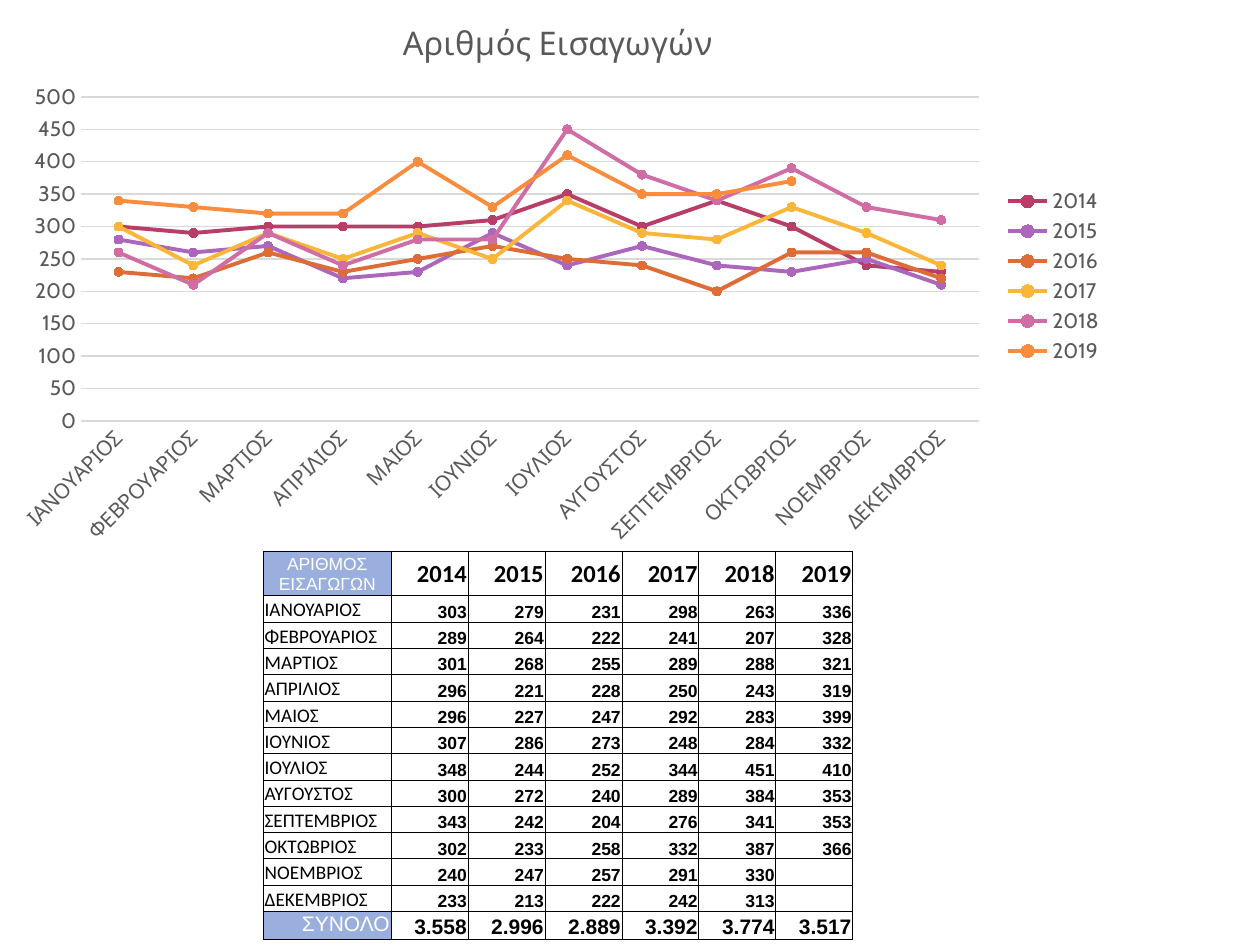
from lxml import etree
from pptx import Presentation
from pptx.chart.data import CategoryChartData
from pptx.dml.color import RGBColor
from pptx.enum.chart import XL_CHART_TYPE, XL_LEGEND_POSITION, XL_MARKER_STYLE, XL_TICK_MARK
from pptx.enum.text import MSO_ANCHOR, PP_ALIGN
from pptx.oxml import parse_xml
from pptx.oxml.ns import nsdecls, qn
from pptx.util import Pt

LINE_MARKERS = XL_CHART_TYPE.LINE_MARKERS
LEGEND_RIGHT = XL_LEGEND_POSITION.RIGHT
CIRCLE = XL_MARKER_STYLE.CIRCLE
NO_TICK = XL_TICK_MARK.NONE
TOP, MIDDLE, BOTTOM = MSO_ANCHOR.TOP, MSO_ANCHOR.MIDDLE, MSO_ANCHOR.BOTTOM
LEFT, CENTER, RIGHT = PP_ALIGN.LEFT, PP_ALIGN.CENTER, PP_ALIGN.RIGHT

BLACK, WHITE, GREY, GRID, BLUE = "000000", "FFFFFF", "595959", "D9D9D9", "9BAFDE"
YEARS = ["2014", "2015", "2016", "2017", "2018", "2019"]
YEAR_COLORS = ["B83D68", "AC66BB", "DE6C36", "F9B639", "CF6DA4", "FA8D3D"]
ADMISSIONS = {
    "ΙΑΝΟΥΑΡΙΟΣ": [303, 279, 231, 298, 263, 336],
    "ΦΕΒΡΟΥΑΡΙΟΣ": [289, 264, 222, 241, 207, 328],
    "ΜΑΡΤΙΟΣ": [301, 268, 255, 289, 288, 321],
    "ΑΠΡΙΛΙΟΣ": [296, 221, 228, 250, 243, 319],
    "ΜΑΙΟΣ": [296, 227, 247, 292, 283, 399],
    "ΙΟΥΝΙΟΣ": [307, 286, 273, 248, 284, 332],
    "ΙΟΥΛΙΟΣ": [348, 244, 252, 344, 451, 410],
    "ΑΥΓΟΥΣΤΟΣ": [300, 272, 240, 289, 384, 353],
    "ΣΕΠΤΕΜΒΡΙΟΣ": [343, 242, 204, 276, 341, 353],
    "ΟΚΤΩΒΡΙΟΣ": [302, 233, 258, 332, 387, 366],
    "ΝΟΕΜΒΡΙΟΣ": [240, 247, 257, 291, 330, None],
    "ΔΕΚΕΜΒΡΙΟΣ": [233, 213, 222, 242, 313, None],
}
BY_YEAR = list(zip(*ADMISSIONS.values()))


def rgb(value):
    return RGBColor.from_string(value)


def style_font(font, name, size, color, bold=False):
    font.name, font.size, font.bold = name, Pt(size), bold
    font.color.rgb = rgb(color)


def add_admissions_chart(page, left, top, width, height):
    data = CategoryChartData(number_format="#,##0")
    data.categories = list(ADMISSIONS)
    for year, values in zip(YEARS, BY_YEAR):
        # The lines are plotted to the nearest ten
        data.add_series(year, [None if v is None else round(v, -1) for v in values])
    chart = page.shapes.add_chart(
        LINE_MARKERS, Pt(left), Pt(top), Pt(width), Pt(height), data).chart
    style_font(chart.font, "Cabin", 10, BLACK)

    # Title and legend
    chart.has_title = True
    title = chart.chart_title
    title.include_in_layout = False
    para = title.text_frame.paragraphs[0]
    para.text = "Αριθμός Εισαγωγών"
    style_font(para.runs[0].font, "Cabin", 18.6, GREY)
    chart.has_legend = True
    chart.legend.position = LEGEND_RIGHT
    chart.legend.include_in_layout = False
    style_font(chart.legend.font, "Cabin", 12, GREY)

    # Axes
    months, scale = chart.category_axis, chart.value_axis
    for axis in (months, scale):
        axis.major_tick_mark = axis.minor_tick_mark = NO_TICK
        style_font(axis.tick_labels.font, "Cabin", 12, GREY)
    label_body = months._element.find(qn("c:txPr")).find(qn("a:bodyPr"))
    label_body.set("rot", "-2700000")
    label_body.set("vert", "horz")
    scale.minimum_scale, scale.maximum_scale, scale.major_unit = 0, 500, 50
    scale.tick_labels.number_format = "#,##0"
    scale.tick_labels.number_format_is_linked = False
    scale.format.line.fill.background()
    for line in (months.format.line, scale.major_gridlines.format.line):
        line.color.rgb = rgb(GRID)
        line.width = Pt(0.75)

    # Year lines
    chart.plots[0].vary_by_categories = False
    for series, color in zip(chart.plots[0].series, YEAR_COLORS):
        series.smooth = False
        series.format.line.color.rgb = rgb(color)
        series.format.line.width = Pt(2.25)
        marker = series.marker
        marker.style, marker.size = CIRCLE, 5
        marker.format.fill.solid()
        marker.format.fill.fore_color.rgb = rgb(color)
        marker.format.line.color.rgb = rgb(color)


def add_borders(cell):
    properties = cell._tc.get_or_add_tcPr()
    for side in "LRTB":
        properties.append(parse_xml(
            f'<a:ln{side} {nsdecls("a")} w="6350"><a:solidFill>'
            f'<a:srgbClr val="{BLACK}"/></a:solidFill></a:ln{side}>'))


def fill_cell(cell, text, font, size, align, anchor, bold=False, color=BLACK, fill=None):
    cell.margin_left = cell.margin_right = cell.margin_top = Pt(0.75)
    cell.margin_bottom = 0
    cell.vertical_anchor = anchor
    add_borders(cell)
    if fill:
        cell.fill.solid()
        cell.fill.fore_color.rgb = rgb(fill)
    else:
        cell.fill.background()
    para = cell.text_frame.paragraphs[0]
    para.alignment = align
    if text:
        para.text = text
        style_font(para.runs[0].font, font, size, color, bold)
    else:
        # Keeps an empty cell from stretching its row
        etree.SubElement(para._p, qn("a:endParaRPr")).set("sz", str(size * 100))


def add_admissions_table(page, left, top, width, height):
    label_width, head_height, total_height = 73, 25.5, 15.8
    row_count, column_count = len(ADMISSIONS) + 2, len(YEARS) + 1
    frame = page.shapes.add_table(
        row_count, column_count, Pt(left), Pt(top), Pt(width), Pt(height))
    table = frame.table
    table.first_row = table.horz_banding = False
    year_width = (width - label_width) / len(YEARS)
    month_height = (height - head_height - total_height) / len(ADMISSIONS)
    for column, size in zip(table.columns, [label_width] + [year_width] * len(YEARS)):
        column.width = Pt(size)
    row_heights = [head_height] + [month_height] * len(ADMISSIONS) + [total_height]
    for row, size in zip(table.rows, row_heights):
        row.height = Pt(size)

    # Label column
    last = row_count - 1
    fill_cell(table.cell(0, 0), "ΑΡΙΘΜΟΣ ΕΙΣΑΓΩΓΩΝ", "Arial", 10, CENTER, MIDDLE,
              color=WHITE, fill=BLUE)
    for row, month in enumerate(ADMISSIONS, 1):
        fill_cell(table.cell(row, 0), month, "Calibri", 11, LEFT, BOTTOM)
    fill_cell(table.cell(last, 0), "ΣΥΝΟΛΟ", "Arial", 12, RIGHT, TOP,
              color=WHITE, fill=BLUE)

    # Year columns with their totals
    for column, (year, values) in enumerate(zip(YEARS, BY_YEAR), 1):
        fill_cell(table.cell(0, column), year, "Calibri", 14, RIGHT, MIDDLE, bold=True)
        for row, value in enumerate(values, 1):
            text = "" if value is None else str(value)
            fill_cell(table.cell(row, column), text, "Arial", 10, RIGHT, BOTTOM, bold=True)
        total = f"{sum(filter(None, values)):,}".replace(",", ".")
        fill_cell(table.cell(last, column), total, "Arial", 12, RIGHT, BOTTOM, bold=True)


def main():
    deck = Presentation()
    deck.slide_width, deck.slide_height = Pt(720), Pt(540)
    page = deck.slides.add_slide(deck.slide_layouts[6])
    add_admissions_table(page, 150.5, 315, 336.8, 221.6)
    add_admissions_chart(page, 0, -2, 637.8, 319.7)
    deck.save("out.pptx")


if __name__ == "__main__":
    main()
